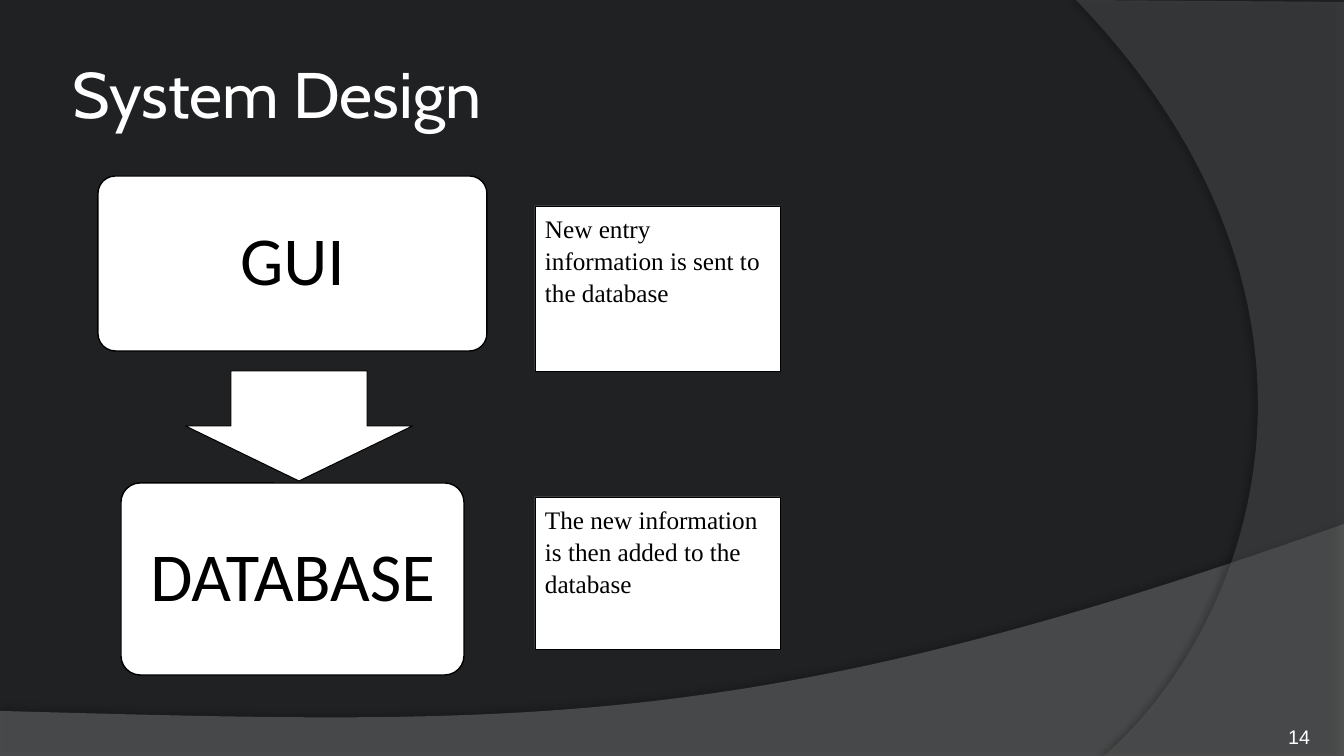
from lxml import etree
from pptx import Presentation
from pptx import util as u
from pptx.dml.color import RGBColor
from pptx.enum import shapes, text
from pptx.oxml import ns

PX = 914400 / 100.8
DARK = RGBColor(0x1F, 0x21, 0x23)
WHITE = RGBColor(0xFF, 0xFF, 0xFF)
BLACK = RGBColor(0, 0, 0)
GRAY = RGBColor(0x7F, 0x7F, 0x7F)
SLATE = RGBColor(0x5E, 0x5E, 0x5E)
LEFT, MID, RIGHT = text.PP_ALIGN.LEFT, text.PP_ALIGN.CENTER, text.PP_ALIGN.RIGHT
TOP, CENTER, BASE = text.MSO_ANCHOR.TOP, text.MSO_ANCHOR.MIDDLE, text.MSO_ANCHOR.BOTTOM
KIND = shapes.MSO_SHAPE


def emu(n):
    return u.Emu(round(n * PX))


def write(shape, words, font, size, color, align, anchor, pads):
    frame = shape.text_frame
    frame.word_wrap = True
    frame.vertical_anchor = anchor
    frame.margin_left = frame.margin_right = emu(pads[0])
    frame.margin_top = frame.margin_bottom = emu(pads[1])
    para = frame.paragraphs[0]
    para.text = words
    para.alignment = align
    para.font.name = font
    para.font.size = u.Pt(size)
    para.font.color.rgb = color
    return para


def label(slide, box, *style):
    write(slide.shapes.add_textbox(*map(emu, box)), *style)


def block(slide, kind, box, width):
    shape = slide.shapes.add_shape(kind, *map(emu, box))
    shape.shadow.inherit = False
    shape.fill.solid()
    shape.fill.fore_color.rgb = WHITE
    shape.line.color.rgb = BLACK
    shape.line.width = u.Pt(width)
    return shape


def curve(a, b, c, d, steps=60):
    for i in range(steps + 1):
        t = i / steps
        s = 1 - t
        yield tuple(s**3 * p + 3 * s * s * t * q + 3 * s * t * t * r + t**3 * e
                    for p, q, r, e in zip(a, b, c, d))


def sweep(slide, points, color, alpha, shade, dist, angle):
    first, *rest = [(emu(x), emu(y)) for x, y in points]
    path = slide.shapes.build_freeform(*first, scale=1.0)
    path.add_line_segments(rest, close=True)
    shape = path.convert_to_shape()
    shape.shadow.inherit = False
    shape.line.fill.background()
    shape.fill.solid()
    shape.fill.fore_color.rgb = color
    props = shape._element.spPr
    tint = props.find(".//" + ns.qn("a:srgbClr"))
    etree.SubElement(tint, ns.qn("a:alpha"), val=str(alpha * 1000))
    glow = etree.SubElement(
        props.find(ns.qn("a:effectLst")), ns.qn("a:outerShdw"),
        blurRad=str(u.Pt(4)), dist=str(u.Pt(dist)), dir=str(angle * 60000),
        algn="ctr", rotWithShape="0")
    ink = etree.SubElement(glow, ns.qn("a:srgbClr"), val=str(BLACK))
    etree.SubElement(ink, ns.qn("a:alpha"), val=str(shade * 1000))


def backdrop(slide, wide, high):
    fill = slide.background.fill
    fill.solid()
    fill.fore_color.rgb = DARK
    wave = curve((wide, 524), (751, 735), (525, 725), (0, 711))
    sweep(slide, [(0, high), (wide, high), *wave], GRAY, 45, 35, 3.5, 270)
    arc = curve((1104, high), (1256, 624), (1368, 302), (1076, 0))
    sweep(slide, [(wide, 2), (wide, high), *arc], SLATE, 40, 45, 4, 180)


def flow(slide, x, y, wide):
    mid = x + wide / 2
    for words, w, top, h in (("GUI", wide, y, 175), ("DATABASE", 343, y + 307, 192)):
        node = block(slide, KIND.ROUNDED_RECTANGLE, (mid - w / 2, top, w, h), 1)
        node.adjustments[0] = 0.1
        para = write(node, words, "Calibri", 49, BLACK, MID, CENTER, (10, 10))
        para.line_spacing = 0.9
    arrow = block(slide, KIND.DOWN_ARROW, (mid - 107, y + 195, 227, 110), 0.75)
    arrow.adjustments[0] = 0.6
    arrow.adjustments[1] = 0.5


def notes(slide, x, wide):
    for words, y, h in (
            ("New entry information is sent to the database", 206, 165),
            ("The new information is then added to the database", 497, 152)):
        note = block(slide, KIND.RECTANGLE, (x, y, wide, h), 0.5)
        para = write(note, words, "Times New Roman", 18, BLACK, LEFT, TOP, (10, 5))
        para.line_spacing = 1.07
        para.space_after = u.Pt(8)


def main():
    deck = Presentation()
    deck.slide_width, deck.slide_height = emu(1344), emu(756)
    slide = deck.slides.add_slide(deck.slide_layouts[6])
    backdrop(slide, 1344, 756)
    label(slide, (68, 30, 1098, 126), "System Design", "Cabin", 46, WHITE,
          LEFT, CENTER, (5, 5))
    flow(slide, 98, 176, 389)
    notes(slide, 535, 245)
    label(slide, (1198, 708, 112, 40), "14", "Arial", 14, WHITE,
          RIGHT, BASE, (0, 0))
    deck.save("out.pptx")


if __name__ == "__main__":
    main()
